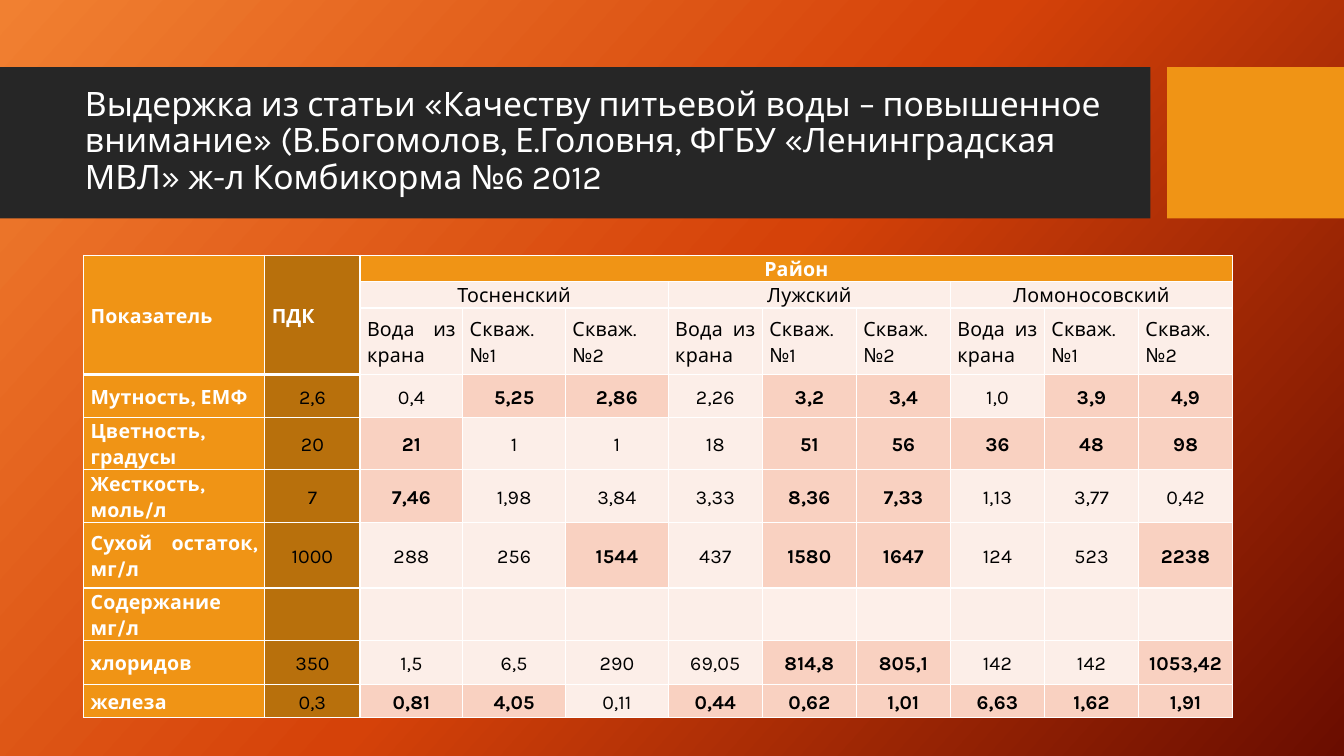
from copy import deepcopy

from lxml import etree
from pptx import Presentation
from pptx.dml.color import RGBColor
from pptx.enum.shapes import MSO_SHAPE
from pptx.enum.text import MSO_ANCHOR, MSO_AUTO_SIZE, PP_ALIGN
from pptx.oxml.ns import qn
from pptx.util import Pt

COLORS = {
    "white": "FFFFFF", "black": "000000", "band": "262626",
    "orange": "F09415", "limit": "B8700C",
    "normal": "FCEEE8", "exceeded": "F9D1C1", "blank": "FDEFE9",
    "glow": "F18031", "flame": "D54209", "ember": "6A0D00",
}
FONT = "Karla"
DISTRICTS = ["Тосненский", "Лужский", "Ломоносовский"]
SOURCES = ["Вода из крана", "Скваж. №1", "Скваж. №2"]
MEASUREMENTS = [
    ("Мутность, ЕМФ", "2,6", "0,4 5,25 2,86 2,26 3,2 3,4 1,0 3,9 4,9"),
    ("Цветность, градусы", "20", "21 1 1 18 51 56 36 48 98"),
    ("Жесткость, моль/л", "7", "7,46 1,98 3,84 3,33 8,36 7,33 1,13 3,77 0,42"),
    ("Сухой остаток, мг/л", "1000", "288 256 1544 437 1580 1647 124 523 2238"),
    ("Содержание мг/л", "", ""),
    ("хлоридов", "350", "1,5 6,5 290 69,05 814,8 805,1 142 142 1053,42"),
    ("железа", "0,3", "0,81 4,05 0,11 0,44 0,62 1,01 6,63 1,62 1,91"),
]
COLUMN_WIDTHS = [129.5, 68] + [73.4] * 3 + [67.2] * 6
ROW_HEIGHTS = [18.9, 18.9, 47.5, 30.6, 37.4, 37.4, 46.8, 37.4, 31.7, 23.6]
HEADER_ROWS = 3


def rgb(name):
    return RGBColor.from_string(COLORS[name])


def write_cell(row, column, text, fill, color="black", bold=False,
               align=PP_ALIGN.CENTER, spacing=10):
    """Fill one table cell; spacing is in hundredths of a point."""
    cell = table.cell(row, column)
    cell.fill.solid()
    cell.fill.fore_color.rgb = rgb(fill)
    if not text:
        return
    para = cell.text_frame.paragraphs[0]
    para.alignment = align
    para.line_spacing = 1.15
    span = para.add_run()
    span.text = text
    span.font.name = FONT
    span.font.size = Pt(14)
    span.font.bold = bold
    span.font.color.rgb = rgb(color)
    span._r.get_or_add_rPr().set("spc", str(spacing))


deck = Presentation()
deck.slide_width, deck.slide_height = Pt(960), Pt(540)
page = deck.slides.add_slide(deck.slide_layouts[5])

# Background gradient
backdrop = page.background.fill
backdrop.gradient()
backdrop.gradient_angle = 318
stop_list = page._element.find(".//" + qn("a:gsLst"))
stop_list.append(deepcopy(stop_list[-1]))
gradient = [(0, "glow"), (0.5, "flame"), (1, "ember")]
for stop, (position, name) in zip(backdrop.gradient_stops, gradient):
    stop.position = position
    stop.color.rgb = rgb(name)

# Title band
for left, width, name in [(0, 821.8, "band"), (833.6, 126.4, "orange")]:
    bar = page.shapes.add_shape(MSO_SHAPE.RECTANGLE, Pt(left), Pt(48), Pt(width), Pt(108))
    bar.shadow.inherit = False
    bar.fill.solid()
    bar.fill.fore_color.rgb = rgb(name)
    bar.line.fill.background()

title = page.shapes.title
title.left, title.top, title.width, title.height = Pt(53.5), Pt(59), Pt(756.5), Pt(85)
page.shapes._spTree.append(title._element)  # in front of the band
frame = title.text_frame
frame.auto_size = MSO_AUTO_SIZE.NONE
frame.word_wrap = True
frame.vertical_anchor = MSO_ANCHOR.MIDDLE
para = frame.paragraphs[0]
para.alignment = PP_ALIGN.LEFT
para.line_spacing = 0.9
span = para.add_run()
span.text = ("Выдержка из статьи «Качеству питьевой воды – повышенное внимание» "
             "(В.Богомолов, Е.Головня, ФГБУ «Ленинградская МВЛ» ж-л Комбикорма №6 2012")
span.font.name = FONT
span.font.size = Pt(24)
span.font.color.rgb = rgb("white")

# Table grid
table = page.shapes.add_table(
    len(ROW_HEIGHTS), len(COLUMN_WIDTHS), Pt(59.7), Pt(182.2),
    Pt(sum(COLUMN_WIDTHS)), Pt(sum(ROW_HEIGHTS))).table
table.first_row = table.horz_banding = False
for column, width in zip(table.columns, COLUMN_WIDTHS):
    column.width = Pt(width)
for row, height in zip(table.rows, ROW_HEIGHTS):
    row.height = Pt(height)

for row in range(len(ROW_HEIGHTS)):
    for column in range(len(COLUMN_WIDTHS)):
        cell = table.cell(row, column)
        cell.vertical_anchor = MSO_ANCHOR.MIDDLE
        cell.margin_left = cell.margin_right = Pt(5)
        cell.margin_top = cell.margin_bottom = 0
        properties = cell._tc.get_or_add_tcPr()
        for side in ("lnL", "lnR", "lnT", "lnB"):
            thick = side == "lnB" and column < 2 and row < HEADER_ROWS
            border = etree.SubElement(properties, qn(f"a:{side}"), w=str(Pt(3 if thick else 1)))
            paint = etree.SubElement(border, qn("a:solidFill"))
            etree.SubElement(paint, qn("a:srgbClr"), val=COLORS["white"])

# Header
for column in (0, 1):
    table.cell(0, column).merge(table.cell(HEADER_ROWS - 1, column))
table.cell(0, 2).merge(table.cell(0, len(COLUMN_WIDTHS) - 1))
write_cell(0, 0, "Показатель", "orange", "white", True, PP_ALIGN.JUSTIFY)
write_cell(0, 1, "ПДК", "limit", "white", True, PP_ALIGN.JUSTIFY, 0)
write_cell(0, 2, "Район", "orange", "white", True)
for index, district in enumerate(DISTRICTS):
    first = 2 + index * len(SOURCES)
    table.cell(1, first).merge(table.cell(1, first + len(SOURCES) - 1))
    write_cell(1, first, district, "normal")
    for column, source in enumerate(SOURCES, first):
        write_cell(2, column, source, "normal", align=PP_ALIGN.JUSTIFY)

# Values above the limit are bold on a darker fill
for row, (indicator, limit, readings) in enumerate(MEASUREMENTS, HEADER_ROWS):
    write_cell(row, 0, indicator, "orange", "white", True, PP_ALIGN.JUSTIFY)
    write_cell(row, 1, limit, "limit", spacing=0)
    for column, reading in enumerate(readings.split(), 2):
        exceeded = float(reading.replace(",", ".")) > float(limit.replace(",", "."))
        write_cell(row, column, reading, "exceeded" if exceeded else "normal", bold=exceeded)
    if not readings:
        for column in range(2, len(COLUMN_WIDTHS)):
            write_cell(row, column, "", "blank" if column in (6, 7) else "normal")

deck.save("out.pptx")
